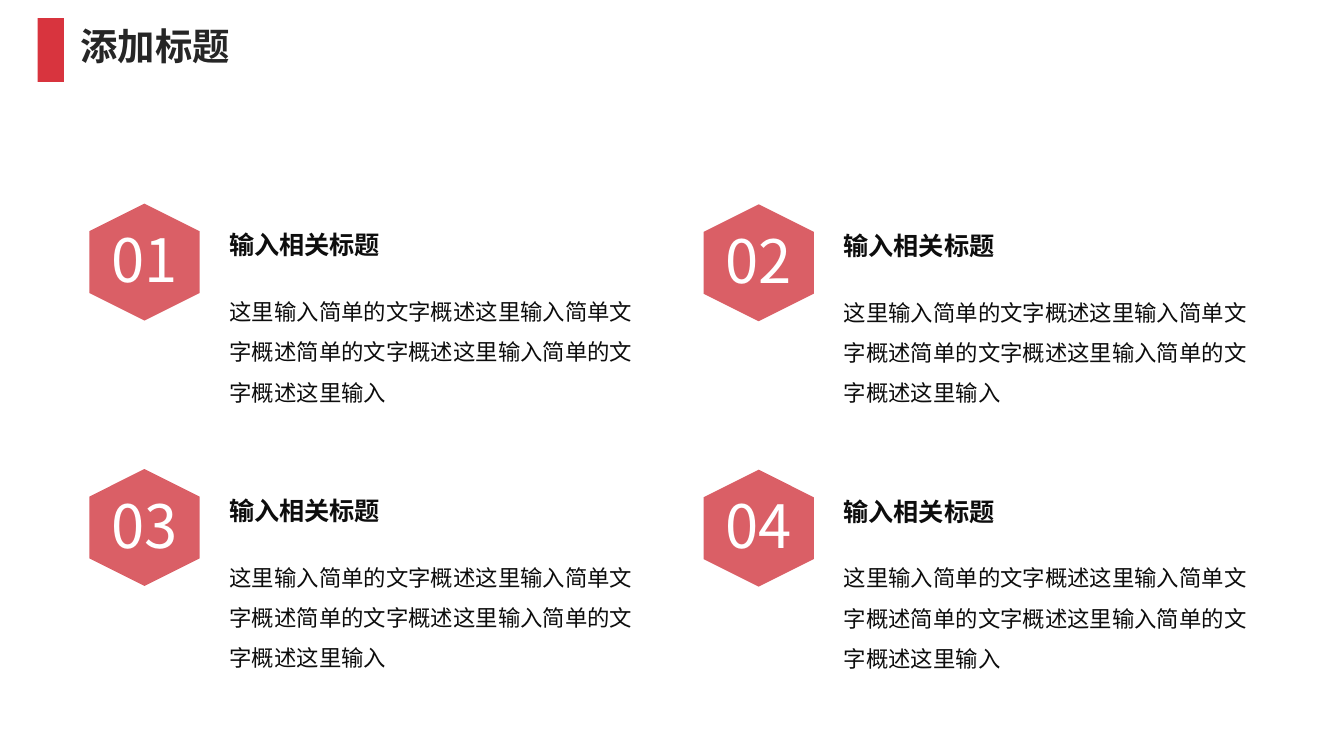
from dataclasses import dataclass
from lxml.etree import SubElement
from pptx import Presentation
from pptx.dml.color import RGBColor
from pptx.enum.shapes import MSO_SHAPE
from pptx.enum.text import MSO_ANCHOR, MSO_AUTO_SIZE, PP_ALIGN
from pptx.oxml.ns import qn
from pptx.util import Pt

SCALE = 4572
RED = RGBColor(0xD8, 0x34, 0x3E)
ROSE = RGBColor(0xDA, 0x5F, 0x66)
WHITE = RGBColor(0xFF, 0xFF, 0xFF)
INK = RGBColor(0x0D, 0x0D, 0x0D)
GREY = RGBColor(0x26, 0x26, 0x26)
NOTO = "Noto Sans CJK SC"
HEAD = "输入相关标题"
BODY = "这里输入简单的文字概述这里输入简单文字概述简单的文字概述这里输入简单的文字概述这里输入"


@dataclass(frozen=True)
class Box:
    x: int
    y: int
    w: int
    h: int

    def emu(self) -> tuple[int, ...]:
        return tuple(n * SCALE for n in (self.x, self.y, self.w, self.h))


@dataclass(frozen=True)
class Style:
    size: float
    color: RGBColor
    face: str = NOTO
    bold: bool = False
    wrap: bool = True
    space: float = 1.0
    top: int = 0


@dataclass(frozen=True)
class Item:
    label: str
    x: int
    y: int


TITLE = Style(20, GREY, bold=True, wrap=False)
NUMBER = Style(32, WHITE, wrap=False)
HEADING = Style(13.5, INK, bold=True, top=4)
DETAIL = Style(12, INK, face="Calibri", space=1.5, top=10)


def write(shape, text: str, style: Style) -> None:
    frame = shape.text_frame
    frame.word_wrap = style.wrap
    frame.auto_size = MSO_AUTO_SIZE.NONE
    frame.vertical_anchor = MSO_ANCHOR.TOP
    frame.margin_left = frame.margin_right = 20 * SCALE
    frame.margin_top = style.top * SCALE
    frame.margin_bottom = 0
    line = frame.paragraphs[0]
    line.alignment = PP_ALIGN.LEFT
    line.line_spacing = style.space
    run = line.add_run()
    run.text = text
    font = run.font
    font.size = Pt(style.size)
    font.bold = style.bold
    font.color.rgb = style.color
    font.name = style.face
    SubElement(run._r.get_or_add_rPr(), qn("a:ea")).set("typeface", style.face)


def add_text(slide, box: Box, text: str, style: Style) -> None:
    write(slide.shapes.add_textbox(*box.emu()), text, style)


def add_block(slide, kind: MSO_SHAPE, box: Box, color: RGBColor, turn: int = 0) -> None:
    shape = slide.shapes.add_shape(kind, *box.emu())
    shape.rotation = turn
    shape.shadow.inherit = False
    shape.fill.solid()
    shape.fill.fore_color.rgb = color
    shape.line.fill.background()


def add_item(slide, item: Item) -> None:
    x, y = item.x, item.y
    add_block(slide, MSO_SHAPE.HEXAGON, Box(x, y, 174, 164), ROSE, 270)
    add_text(slide, Box(x + 18, y + 24, 146, 128), item.label, NUMBER)
    add_text(slide, Box(x + 194, y + 106, 646, 202), BODY, DETAIL)
    add_text(slide, Box(x + 194, y + 30, 442, 80), HEAD, HEADING)


def main() -> None:
    deck = Presentation()
    deck.slide_width = 2000 * SCALE
    deck.slide_height = 1125 * SCALE
    slide = deck.slides.add_slide(deck.slide_layouts[5])
    title = slide.shapes.title
    title.left, title.top, title.width, title.height = Box(100, 34, 264, 88).emu()
    write(title, "添加标题", TITLE)
    add_block(slide, MSO_SHAPE.RECTANGLE, Box(56, 27, 39, 95), RED)
    for i in range(4):
        row, col = divmod(i, 2)
        add_item(slide, Item(f"{i + 1:02}", 128 + 914 * col, 308 + 395 * row + col))
    deck.save("out.pptx")


if __name__ == "__main__":
    main()
